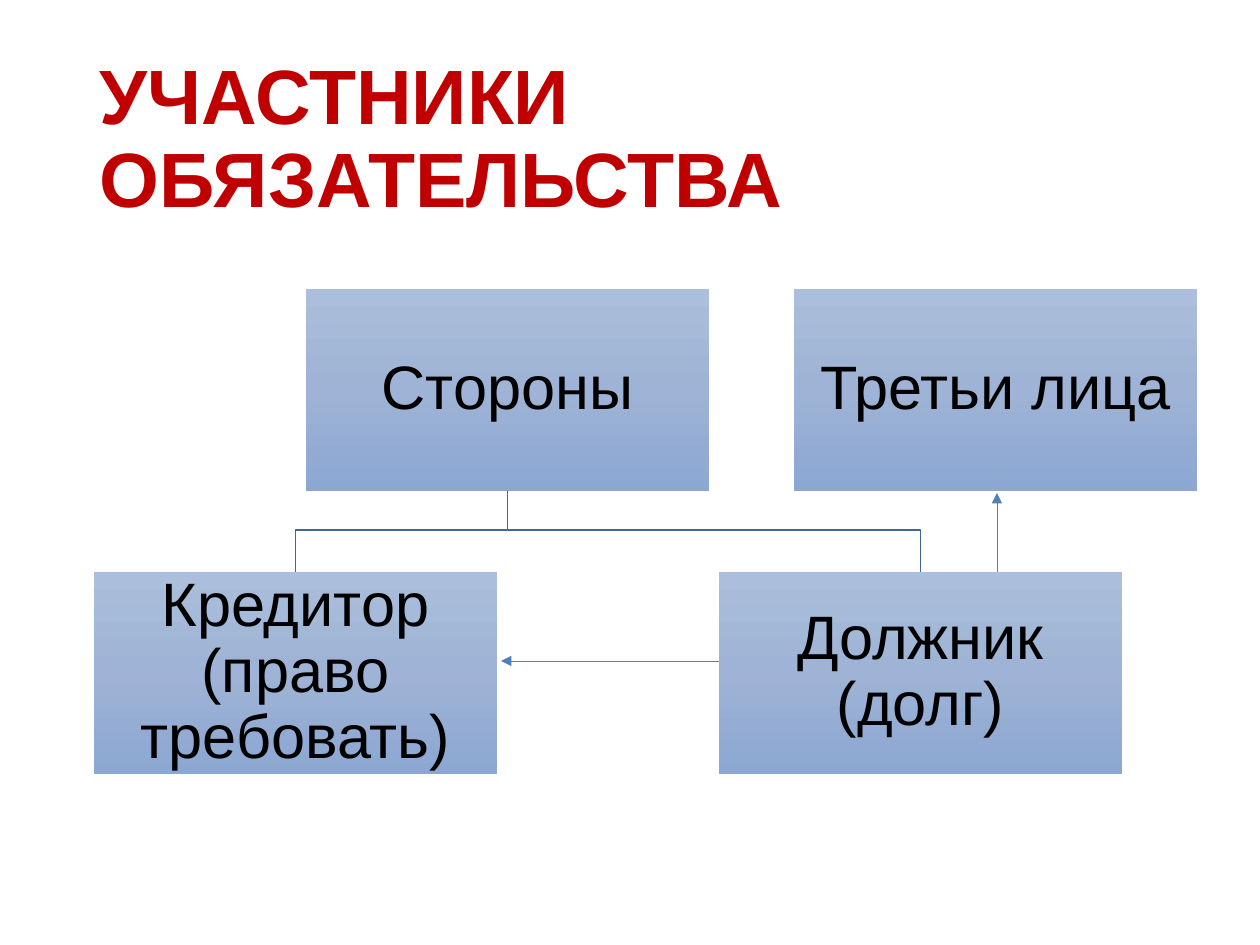
from copy import deepcopy

from pptx import Presentation
from pptx.dml.color import RGBColor
from pptx.enum.shapes import MSO_CONNECTOR, MSO_SHAPE
from pptx.enum.text import MSO_ANCHOR, MSO_AUTO_SIZE, PP_ALIGN
from pptx.oxml.ns import qn
from pptx.util import Pt

RECT = MSO_SHAPE.RECTANGLE
STRAIGHT = MSO_CONNECTOR.STRAIGHT
MIDDLE = MSO_ANCHOR.MIDDLE
NO_FIT = MSO_AUTO_SIZE.NONE
LEFT, CENTER = PP_ALIGN.LEFT, PP_ALIGN.CENTER

PX = 914400 / 126
BOX_W, BOX_H = 403, 202
GRADIENT = ("ABBEDB", "9EB3D5", "8CA7D2")


def px(n):
    return round(n * PX)


def rgb(hex_color):
    return RGBColor.from_string(hex_color)


def write(tf, text, size, color, align, bold=False):
    tf.word_wrap = True
    tf.auto_size = NO_FIT
    tf.vertical_anchor = MIDDLE
    p = tf.paragraphs[0]
    p.alignment = align
    p.line_spacing = 0.9
    r = p.add_run()
    r.text = text
    r.font.name = "Arial"
    r.font.size = Pt(size)
    r.font.bold = bold
    r.font.color.rgb = rgb(color)


def fill_gradient(sp):
    sp.fill.gradient()
    sp.fill.gradient_angle = 270
    # Middle stop
    stops = sp._element.spPr.find(".//" + qn("a:gsLst"))
    middle = deepcopy(stops[0])
    middle.set("pos", "50000")
    stops.insert(1, middle)
    for stop, color in zip(sp.fill.gradient_stops, GRADIENT):
        stop.color.rgb = rgb(color)


def add_title(s, x, y, w, h):
    title = s.shapes.title
    title.left, title.top, title.width, title.height = map(px, (x, y, w, h))
    write(title.text_frame, "УЧАСТНИКИ ОБЯЗАТЕЛЬСТВА", 44, "C00000", LEFT, True)


def add_box(s, x, y, text):
    sp = s.shapes.add_shape(RECT, px(x), px(y), px(BOX_W), px(BOX_H))
    sp.shadow.inherit = False
    sp.line.fill.background()
    fill_gradient(sp)
    tf = sp.text_frame
    tf.margin_left = tf.margin_right = tf.margin_top = tf.margin_bottom = px(3)
    write(tf, text, 35, "000000", CENTER)


def add_branch(s, x1, y1, x2, y2):
    bend = y1 + 39
    fb = s.shapes.build_freeform(px(x1), px(y1))
    fb.add_line_segments([(px(x), px(y)) for x, y in
                          ((x1, bend), (x2, bend), (x2, y2))], close=False)
    sp = fb.convert_to_shape()
    sp.shadow.inherit = False
    sp.fill.background()
    sp.line.color.rgb = rgb("3F6797")
    sp.line.width = Pt(1)


def add_arrow(s, x1, y1, x2, y2):
    line = s.shapes.add_connector(STRAIGHT, *map(px, (x1, y1, x2, y2)))
    line.line.color.rgb = rgb("4F81BD")
    line.line.width = Pt(0.5)
    ln = line.line._get_or_add_ln()
    ln.append(ln.makeelement(qn("a:tailEnd"), {"type": "triangle"}))
    sp_pr = line._element.spPr
    sp_pr.append(sp_pr.makeelement(qn("a:effectLst"), {}))


def add_diagram(s, x, y):
    lower = y + 283
    parties_x, third_x, creditor_x, debtor_x = x + 212, x + 700, x, x + 625
    half = BOX_W / 2

    # Branches from the parties to creditor and debtor
    for child_x in (creditor_x, debtor_x):
        add_branch(s, parties_x + half, y + BOX_H, child_x + half, lower)

    # Participants
    for box_x, box_y, text in (
        (parties_x, y, "Стороны"),
        (debtor_x, lower, "Должник (долг)"),
        (creditor_x, lower, "Кредитор (право требовать)"),
        (third_x, y, "Третьи лица"),
    ):
        add_box(s, box_x, box_y, text)

    # Arrows from the debtor
    add_arrow(s, x + 903, lower, x + 903, y + BOX_H + 2)
    add_arrow(s, debtor_x, lower + 89, creditor_x + BOX_W + 4, lower + 89)


def main():
    prs = Presentation()
    prs.slide_width, prs.slide_height = px(1260), px(945)
    s = prs.slides.add_slide(prs.slide_layouts[5])
    add_title(s, 87, 50, 1086, 183)
    add_diagram(s, 94, 289)
    prs.save("out.pptx")


if __name__ == "__main__":
    main()
